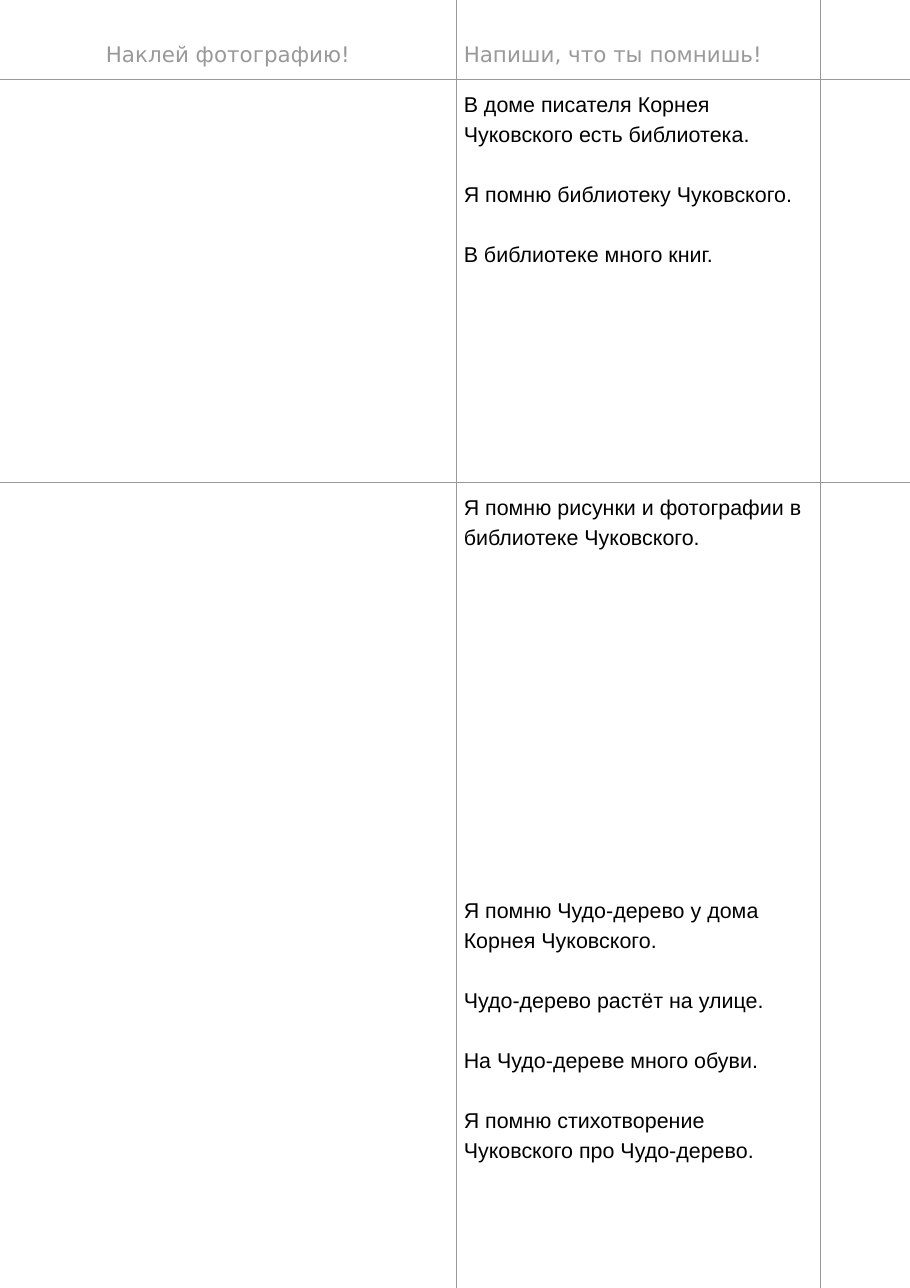
from pptx import Presentation
from pptx.dml.color import RGBColor
from pptx.enum.text import PP_ALIGN as Align
from pptx.oxml.ns import qn
from pptx.util import Inches, Pt
from lxml.etree import SubElement

COLORS = {"text": "000000", "grey": "999999", "paper": "FFFFFF"}
COLS = [4.14, 3.31, 0.82]
ROWS = [0.72, 3.66, 3.66, 3.66]
LINE = Pt(19.6)
INSET = 0.07
HEADER_TOP = 0.34

HEADERS = ["Наклей фотографию!", "Напиши, что ты помнишь!"]
MEMORIES = [
    ["В доме писателя Корнея Чуковского есть библиотека.",
     "Я помню библиотеку Чуковского.",
     "В библиотеке много книг."],
    ["Я помню рисунки и фотографии в библиотеке Чуковского."],
    ["Я помню Чудо-дерево у дома Корнея Чуковского.",
     "Чудо-дерево растёт на улице.",
     "На Чудо-дереве много обуви.",
     "Я помню стихотворение Чуковского про Чудо-дерево."],
]


def write(cell, lines, font="Arial", color="text", align=Align.LEFT, top=INSET):
    """Put one paragraph per line, one line of space apart."""
    cell.margin_left = cell.margin_right = cell.margin_bottom = Inches(INSET)
    cell.margin_top = Inches(top)
    tf = cell.text_frame
    for i, line in enumerate(lines):
        p = tf.paragraphs[0] if i == 0 else tf.add_paragraph()
        p.alignment = align
        p.line_spacing = LINE
        if i:
            p.space_before = LINE
        r = p.add_run()
        r.text = line
        r.font.name = font
        r.font.size = Pt(14)
        r.font.color.rgb = RGBColor.from_string(COLORS[color])


def set_borders(cell, **visible):
    tcPr = cell._tc.get_or_add_tcPr()
    for side in "LRTB":
        ln = SubElement(tcPr, qn(f"a:ln{side}"), w=str(Pt(0.53)))
        if visible[side]:
            fill = SubElement(ln, qn("a:solidFill"))
            SubElement(fill, qn("a:srgbClr"), val=COLORS["grey"])
        else:
            SubElement(ln, qn("a:noFill"))


def add_memory_table(s, x, y):
    frame = s.shapes.add_table(len(ROWS), len(COLS), Inches(x), Inches(y),
                               Inches(sum(COLS)), Inches(sum(ROWS)))
    table = frame.table
    table.first_row = table.horz_banding = False
    for col, width in zip(table.columns, COLS):
        col.width = Inches(width)
    for row, height in zip(table.rows, ROWS):
        row.height = Inches(height)

    # Rules run between columns and under the first two rows only
    for i in range(len(ROWS)):
        for j in range(len(COLS)):
            cell = table.cell(i, j)
            set_borders(cell, L=j > 0, R=j < len(COLS) - 1,
                        T=i in (1, 2), B=i in (0, 1))
            cell.fill.solid()
            cell.fill.fore_color.rgb = RGBColor.from_string(COLORS["paper"])

    for j, (header, align) in enumerate(zip(HEADERS, (Align.CENTER, Align.LEFT))):
        write(table.cell(0, j), [header], font="DejaVu Sans", color="grey",
              align=align, top=HEADER_TOP)
    for i, lines in enumerate(MEMORIES, start=1):
        write(table.cell(i, 1), lines)


def main():
    prs = Presentation()
    prs.slide_width, prs.slide_height = Inches(8.26), Inches(11.69)
    s = prs.slides.add_slide(prs.slide_layouts[6])
    add_memory_table(s, 0, 0)
    prs.save("out.pptx")


if __name__ == "__main__":
    main()
